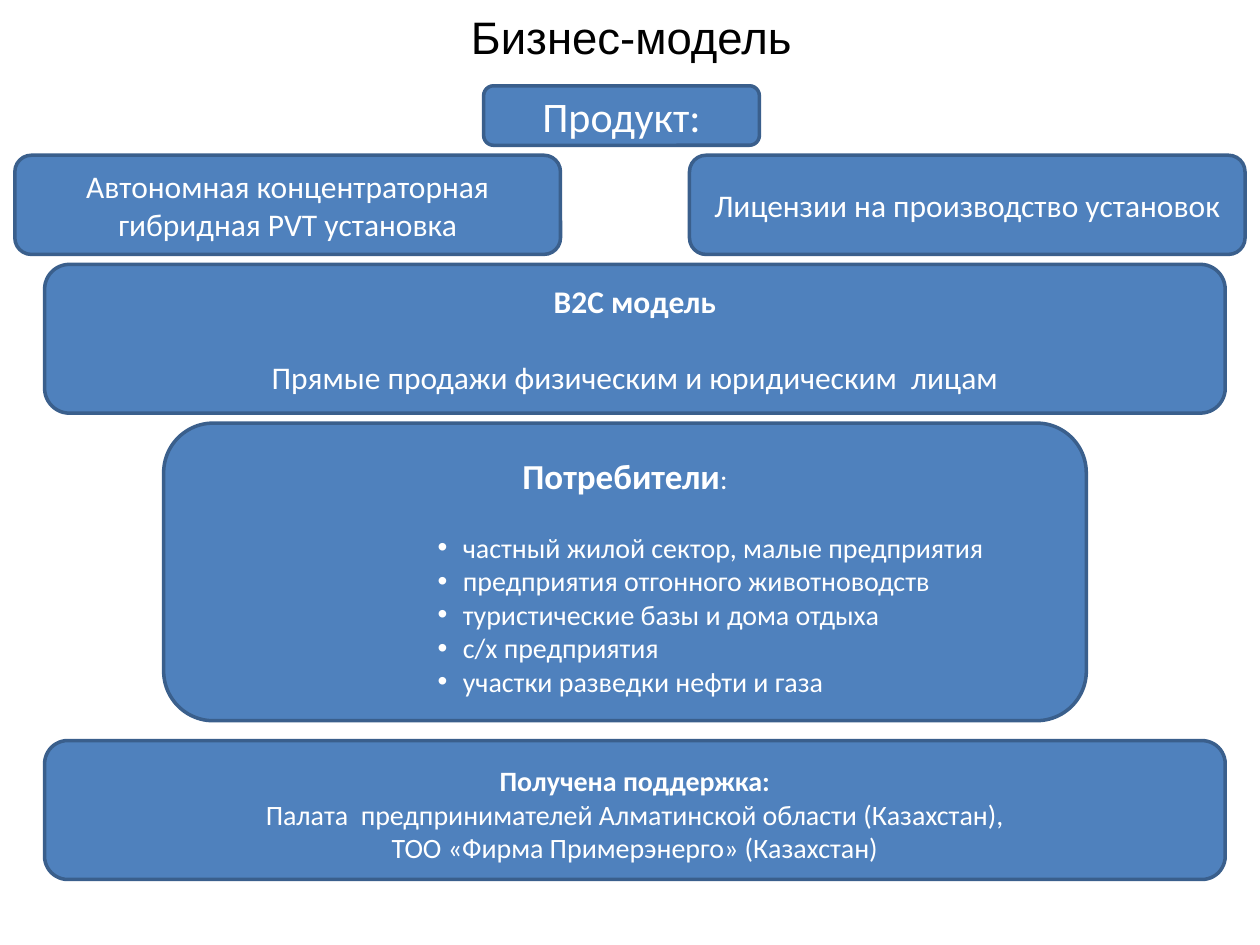
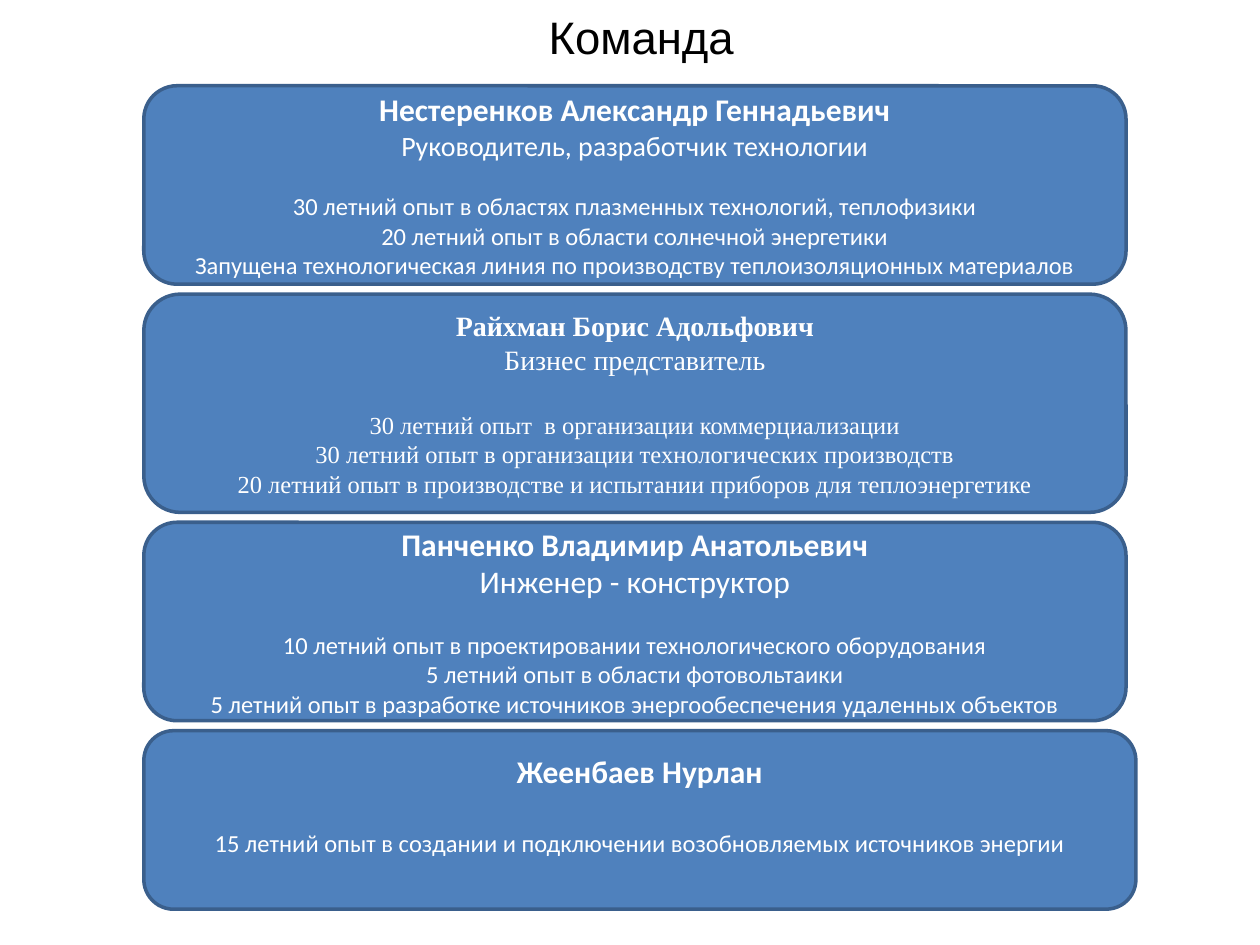
from pptx import Presentation
from pptx.dml.color import RGBColor
from pptx.enum.shapes import MSO_SHAPE as Shape
from pptx.enum.text import MSO_ANCHOR as Anchor, MSO_AUTO_SIZE as Fit, PP_ALIGN as Align
from pptx.oxml.ns import qn
from pptx.util import Cm, Pt
from lxml.etree import SubElement

HUES = {"fill": "4F81BD", "line": "3A5F8C", "text": "FFFFFF", "title": "000000"}
TOP = 1.73
GAP = 0.2


def hue(name):
    return RGBColor.from_string(HUES[name])


def style(run, size, bold, face, color):
    font = run.font
    font.size, font.bold, font.name = Pt(size), bold, face
    font.color.rgb = hue(color)


def write(frame, text, size=18, bold=False, face="Calibri", color="text",
          before=0, dot=False, tail=None):
    """Add one paragraph; tail is a plain (text, size) that ends the line."""
    para = frame.paragraphs[0]
    if para.runs:
        para = frame.add_paragraph()
    para.alignment = Align.LEFT if dot else Align.CENTER
    para.space_before = Pt(before)
    run = para.add_run()
    run.text = text
    style(run, size, bold, face, color)
    if tail:
        end = para.add_run()
        end.text = tail[0]
        style(end, tail[1], False, face, color)
    if dot:
        props = para._p.get_or_add_pPr()
        props.set("marL", str(Cm(5.49)))
        props.set("indent", str(-Cm(0.51)))
        SubElement(props, qn("a:buFont")).set("typeface", "Arial")
        SubElement(props, qn("a:buChar")).set("char", "•")


def panel(slide, box, top=0.13, bottom=0.13):
    """Draw a rounded panel and return its text frame."""
    shape = slide.shapes.add_shape(Shape.ROUNDED_RECTANGLE, *map(Cm, box))
    shape.shadow.inherit = False
    shape.fill.solid()
    shape.fill.fore_color.rgb = hue("fill")
    shape.line.color.rgb = hue("line")
    shape.line.width = Pt(2)
    frame = shape.text_frame
    frame.word_wrap = True
    frame.vertical_anchor = Anchor.MIDDLE
    frame.margin_top, frame.margin_bottom = Cm(top), Cm(bottom)
    return frame


def start(deck, title, left):
    slide = deck.slides.add_slide(deck.slide_layouts[5])
    head = slide.shapes.title
    head.left, head.top, head.width, head.height = map(Cm, (left, -0.86, 22.86, 3.18))
    frame = head.text_frame
    frame.auto_size = Fit.NONE
    frame.vertical_anchor = Anchor.MIDDLE
    write(frame, title, size=26, face="Arial", color="title")
    return slide


def goods(slide, left, top, width, height):
    """Two product panels at the outer edges of the box."""
    write(panel(slide, (left, top, 11, height)),
          "Автономная концентраторная гибридная PVT установка")
    wide = 11.2
    write(panel(slide, (left + width - wide, top, wide, height)),
          "Лицензии на производство установок")


def sales(slide, *box):
    frame = panel(slide, box)
    write(frame, "B2C модель", bold=True)
    write(frame, "Прямые продажи физическим и юридическим  лицам", before=22)


def buyers(slide, *box):
    frame = panel(slide, box, top=0.3)
    write(frame, "Потребители", size=20, bold=True, tail=(":", 16))
    groups = ("частный жилой сектор, малые предприятия",
              "предприятия отгонного животноводств",
              "туристические базы и дома отдыха",
              "с/х предприятия",
              "участки разведки нефти и газа")
    for spot, group in enumerate(groups):
        write(frame, group, size=16, before=0 if spot else 19.5, dot=True)


def backing(slide, *box):
    frame = panel(slide, box, top=0.3)
    write(frame, "Получена поддержка:", size=16, bold=True)
    for line in ("Палата  предпринимателей Алматинской области (Казахстан),",
                 "ТОО «Фирма Примерэнерго» (Казахстан)"):
        write(frame, line, size=16)


def product(slide, *box):
    write(panel(slide, box), "Продукт:", size=24)


def model(deck):
    slide = start(deck, "Бизнес-модель", 1.3)
    rows = ((product, 9.75, 5.56, 1.2, GAP),
            (goods, 0.3, 24.8, 2, GAP),
            (sales, 0.9, 23.8, 3, GAP),
            (buyers, 3.3, 18.6, 6, 2 * GAP),
            (backing, 0.9, 23.8, 2.8, 0))
    top = TOP
    for draw, left, width, height, gap in rows:
        draw(slide, left, top, width, height)
        top += height + gap


def member(slide, box, name, role, facts, size=18, sub=16, gap=17,
           face="Calibri", bottom=0.13):
    frame = panel(slide, box, bottom=bottom)
    write(frame, name, size=size, bold=True, face=face)
    if role:
        write(frame, role, size=sub, face=face)
    for spot, fact in enumerate(facts):
        write(frame, fact, size=14, face=face, before=0 if spot else gap)


def team(deck):
    slide = start(deck, "Команда", 1.5)
    people = (
        (4, 19.8, "Нестеренков Александр Геннадьевич",
         "Руководитель, разработчик технологии",
         ("30 летний опыт в областях плазменных технологий, теплофизики",
          "20 летний опыт в области солнечной энергетики",
          "Запущена технологическая линия по производству теплоизоляционных материалов"),
         {}),
        (4.4, 19.8, "Райхман Борис Адольфович", "Бизнес представитель",
         ("30 летний опыт  в организации коммерциализации",
          "30 летний опыт в организации технологических производств",
          "20 летний опыт в производстве и испытании приборов для теплоэнергетике"),
         {"size": 16, "gap": 19.5, "face": "Times New Roman"}),
        (4, 19.8, "Панченко Владимир Анатольевич", "Инженер - конструктор",
         ("10 летний опыт в проектировании технологического оборудования",
          "5 летний опыт в области фотовольтаики",
          "5 летний опыт в разработке источников энергообеспечения удаленных объектов"),
         {"sub": 18}),
        (3.6, 20, "Жеенбаев Нурлан", None,
         ("15 летний опыт в создании и подключении возобновляемых источников энергии",),
         {"gap": 22, "bottom": 0.73}),
    )
    top = TOP
    for height, width, name, role, facts, look in people:
        member(slide, (2.9, top, width, height), name, role, facts, **look)
        top += height + GAP


def main():
    deck = Presentation()
    deck.slide_width, deck.slide_height = Cm(25.4), Cm(19.05)
    model(deck)
    team(deck)
    deck.save("out.pptx")


if __name__ == "__main__":
    main()
